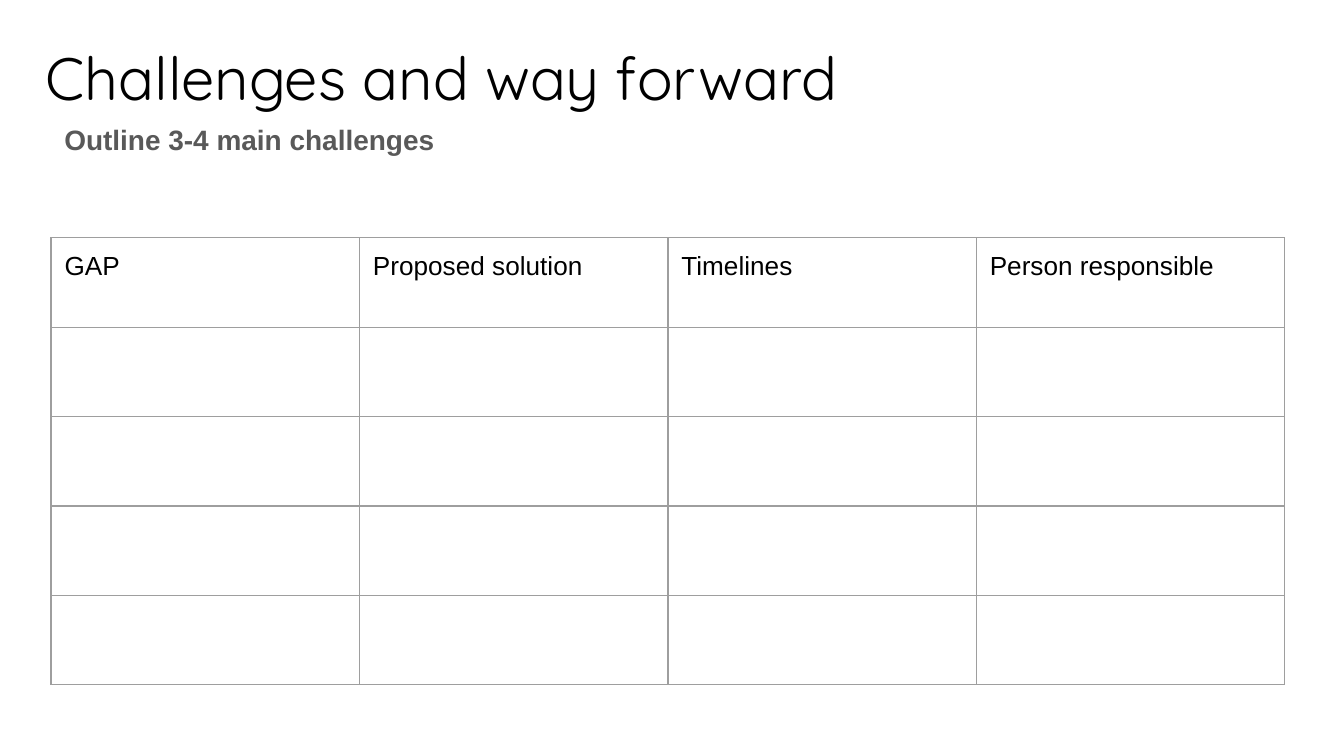
"""Build the "Challenges and way forward" slide with its action table."""
from dataclasses import dataclass

from lxml.etree import SubElement
from pptx import Presentation
from pptx.dml.color import RGBColor
from pptx.oxml.ns import qn
from pptx.util import Emu, Pt

PX_PER_INCH = 200
INSET = 20
HEADERS = ("GAP", "Proposed solution", "Timelines", "Person responsible")
ROW_COUNT = 5
COLUMN_WIDTH = 459
ROW_HEIGHT = 133
BORDER_COLOR = "9E9E9E"
BORDER_WIDTH = Pt(0.75)


@dataclass(frozen=True)
class Box:
    left: int
    top: int
    width: int
    height: int

    def to_emu(self) -> tuple[Emu, ...]:
        return tuple(px(side) for side in (self.left, self.top, self.width, self.height))


TITLE = Box(48, 40, 1864, 126)
SUBTITLE = Box(76, 166, 1864, 126)
TABLE = Box(76, 354, COLUMN_WIDTH * len(HEADERS), ROW_HEIGHT * ROW_COUNT)


def px(length: int) -> Emu:
    return Emu(length * 914400 // PX_PER_INCH)


def color(value: str) -> RGBColor:
    return RGBColor.from_string(value)


def set_margins(target) -> None:
    target.margin_left = target.margin_right = px(INSET)
    target.margin_top = target.margin_bottom = px(INSET)


def write_text(text_frame, text: str, *, size: int, font: str = "Arial",
               fill: str = "000000", bold: bool = False,
               line_spacing: float = 1.0, space_after: int = 0) -> None:
    paragraph = text_frame.paragraphs[0]
    paragraph.line_spacing = line_spacing
    paragraph.space_after = Pt(space_after)
    run = paragraph.add_run()
    run.text = text
    run.font.name = font
    run.font.size = Pt(size)
    run.font.bold = bold
    run.font.color.rgb = color(fill)


def add_text(slide, box: Box, text: str, **text_format) -> None:
    text_frame = slide.shapes.add_textbox(*box.to_emu()).text_frame
    text_frame.word_wrap = True
    set_margins(text_frame)
    write_text(text_frame, text, **text_format)


def style_cell(cell) -> None:
    set_margins(cell)
    properties = cell._tc.get_or_add_tcPr()
    for side in ("a:lnL", "a:lnR", "a:lnT", "a:lnB"):
        line = SubElement(properties, qn(side), w=str(BORDER_WIDTH))
        fill = SubElement(line, qn("a:solidFill"))
        SubElement(fill, qn("a:srgbClr"), val=BORDER_COLOR)
    cell.fill.background()


def add_action_table(slide) -> None:
    table = slide.shapes.add_table(ROW_COUNT, len(HEADERS), *TABLE.to_emu()).table
    table.first_row = table.horz_banding = False
    for column in table.columns:
        column.width = px(COLUMN_WIDTH)
    for row in table.rows:
        row.height = px(ROW_HEIGHT)
    for cell in table.iter_cells():
        style_cell(cell)
    for cell, header in zip(table.rows[0].cells, HEADERS):
        write_text(cell.text_frame, header, size=14)


def main() -> None:
    presentation = Presentation()
    presentation.slide_width = px(2000)
    presentation.slide_height = px(1125)
    slide = presentation.slides.add_slide(presentation.slide_layouts[6])
    slide.background.fill.solid()
    slide.background.fill.fore_color.rgb = color("FFFFFF")
    add_text(slide, TITLE, "Challenges and way forward", size=32, font="Quicksand")
    add_text(slide, SUBTITLE, "Outline 3-4 main challenges", size=15, fill="595959",
             bold=True, line_spacing=0.95, space_after=12)
    add_action_table(slide)
    presentation.save("out.pptx")


if __name__ == "__main__":
    main()
